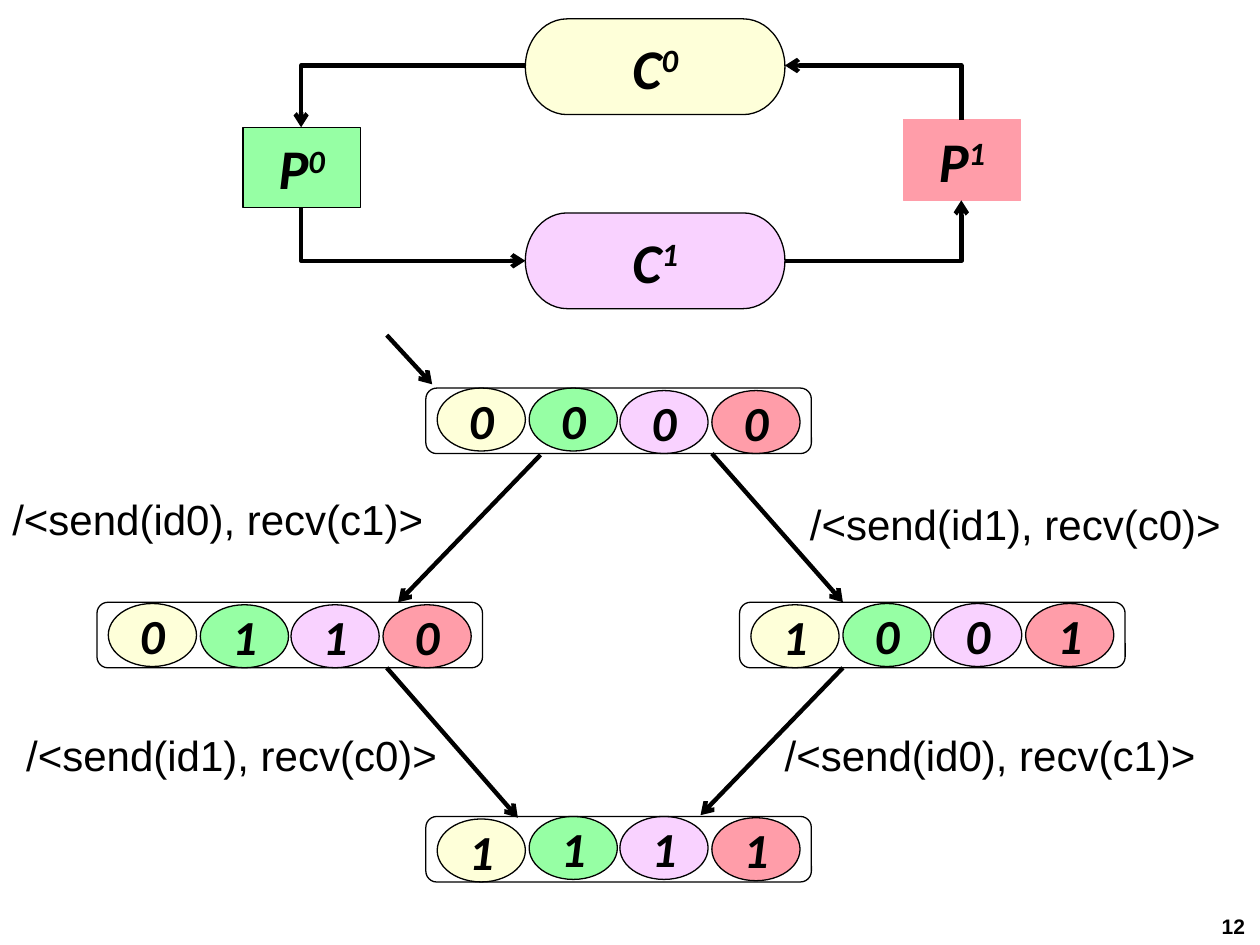
from dataclasses import dataclass

from lxml.etree import SubElement
from pptx import Presentation
from pptx.dml.color import RGBColor
from pptx.enum.shapes import MSO_CONNECTOR as CXN, MSO_SHAPE as SHP
from pptx.enum.text import MSO_ANCHOR as ANCHOR, PP_ALIGN as ALIGN
from pptx.oxml.ns import qn
from pptx.util import Emu, Pt

PX = 9144  # EMU in one px, 100 px to the inch
COLORS = {
    "cream": "FEFFD9",
    "green": "96FFA4",
    "lilac": "F9D2FF",
    "red": "FF9DA9",
    "black": "000000",
}
CELL_COLORS = ("cream", "green", "lilac", "red")  # C0, P0, C1, P1
CELL_STEP = 72.67


@dataclass
class Node:
    letter: str
    index: str
    box: tuple[int, int, int, int]
    kind: SHP
    fill: str
    line: str
    line_width: float


@dataclass
class State:
    bits: str
    left: int
    top: int
    drops: tuple[int, int, int, int]  # offset of each cell below the frame top


@dataclass
class Arrow:
    start: tuple[int, int]
    end: tuple[int, int]
    bent: bool = False  # horizontal first, then vertical
    at_start: bool = False


@dataclass
class Label:
    text: str
    box: tuple[int, int, int, int]
    size: int = 24
    bold: bool = False
    align: ALIGN = ALIGN.LEFT


NODES = [
    Node("P", "0", (193, 101, 93, 64), SHP.RECTANGLE, "green", "black", 0),
    Node("P", "1", (717, 95, 93, 64), SHP.RECTANGLE, "red", "red", 0),
    Node("C", "0", (417, 15, 206, 76), SHP.FLOWCHART_TERMINATOR, "cream", "black", 0.75),
    Node("C", "1", (417, 169, 206, 76), SHP.FLOWCHART_TERMINATOR, "lilac", "black", 0.75),
]
STATES = [
    State("0000", 338, 308, (0, 0, 2, 2)),
    State("0110", 77, 478, (1, 2, 2, 2)),
    State("1001", 587, 478, (2, 1, 1, 1)),
    State("1111", 338, 648, (2, 0, 0, 1)),
]
ARROWS = [
    # Ring of processes and channels
    Arrow((417, 52), (239, 101), bent=True),
    Arrow((417, 207), (239, 165), bent=True, at_start=True),
    Arrow((623, 207), (763, 159), bent=True),
    Arrow((623, 52), (763, 95), bent=True, at_start=True),
    # State transitions
    Arrow((307, 266), (343, 305)),
    Arrow((429, 361), (316, 478)),
    Arrow((565, 360), (669, 478)),
    Arrow((307, 530), (411, 649)),
    Arrow((669, 530), (556, 647)),
]
SEND_0 = "/<send(id0), recv(c1)>"
SEND_1 = "/<send(id1), recv(c0)>"
LABELS = [
    Label(SEND_0, (0, 387, 350, 50)),
    Label(SEND_1, (633, 391, 350, 50)),
    Label(SEND_1, (11, 574, 350, 50)),
    Label(SEND_0, (613, 574, 350, 50)),
    Label("12", (935, 720, 63, 30), 12, True, ALIGN.RIGHT),
]


def emu(*lengths: int) -> list[Emu]:
    return [Emu(n * PX) for n in lengths]


def rgb(name: str) -> RGBColor:
    return RGBColor.from_string(COLORS[name])


def add_box(s, kind: SHP, box, fill: str | None, line: str = "black",
            line_width: float = 0.75):
    sp = s.shapes.add_shape(kind, *emu(*box))
    sp.shadow.inherit = False
    if fill:
        sp.fill.solid()
        sp.fill.fore_color.rgb = rgb(fill)
    else:
        sp.fill.background()
    sp.line.color.rgb = rgb(line)
    sp.line.width = Pt(line_width)
    return sp


def write_symbol(sp, text: str, size: int, superscript: str = "") -> None:
    tf = sp.text_frame
    tf.margin_left = tf.margin_right = tf.margin_top = tf.margin_bottom = 0
    tf.vertical_anchor = ANCHOR.MIDDLE
    p = tf.paragraphs[0]
    p.alignment = ALIGN.CENTER
    p.space_before = Pt(2)
    p.font.name, p.font.size = "Calibri", Pt(size)
    p.font.bold = p.font.italic = True
    p.font.color.rgb = rgb("black")
    p.add_run().text = text
    if superscript:
        r = p.add_run()
        r.text = superscript
        r.font._element.set("baseline", "30000")


def add_node(s, node: Node) -> None:
    sp = add_box(s, node.kind, node.box, node.fill, node.line, node.line_width)
    write_symbol(sp, node.letter, 32, node.index)


def add_state(s, state: State) -> None:
    for i, (bit, color, drop) in enumerate(zip(state.bits, CELL_COLORS, state.drops)):
        left = state.left + 9 + round(i * CELL_STEP)
        cell = add_box(s, SHP.OVAL, (left, state.top + drop, 70, 50), color)
        write_symbol(cell, bit, 28)
    add_box(s, SHP.ROUNDED_RECTANGLE, (state.left, state.top, 306, 52), None)


def add_arrow(s, arrow: Arrow) -> None:
    kind = CXN.ELBOW if arrow.bent else CXN.STRAIGHT
    cxn = s.shapes.add_connector(kind, *emu(*arrow.start, *arrow.end))
    cxn.line.color.rgb = rgb("black")
    cxn.line.width = Pt(2.5)
    sp_pr = cxn._element.spPr
    if arrow.bent:
        sp_pr.find(qn("a:prstGeom")).set("prst", "bentConnector2")
    end = "a:headEnd" if arrow.at_start else "a:tailEnd"
    SubElement(sp_pr.find(qn("a:ln")), qn(end), type="arrow")
    SubElement(sp_pr, qn("a:effectLst"))


def add_label(s, label: Label) -> None:
    tf = s.shapes.add_textbox(*emu(*label.box)).text_frame
    tf.word_wrap = label.align == ALIGN.RIGHT
    p = tf.paragraphs[0]
    p.alignment = label.align
    p.font.name, p.font.size = "Arial", Pt(label.size)
    p.font.bold = label.bold
    p.font.color.rgb = rgb("black")
    p.add_run().text = label.text


def main() -> None:
    prs = Presentation()
    prs.slide_width, prs.slide_height = emu(1000, 750)
    s = prs.slides.add_slide(prs.slide_layouts[6])
    for items, draw in ((NODES, add_node), (STATES, add_state),
                        (ARROWS, add_arrow), (LABELS, add_label)):
        for item in items:
            draw(s, item)
    prs.save("out.pptx")


if __name__ == "__main__":
    main()
